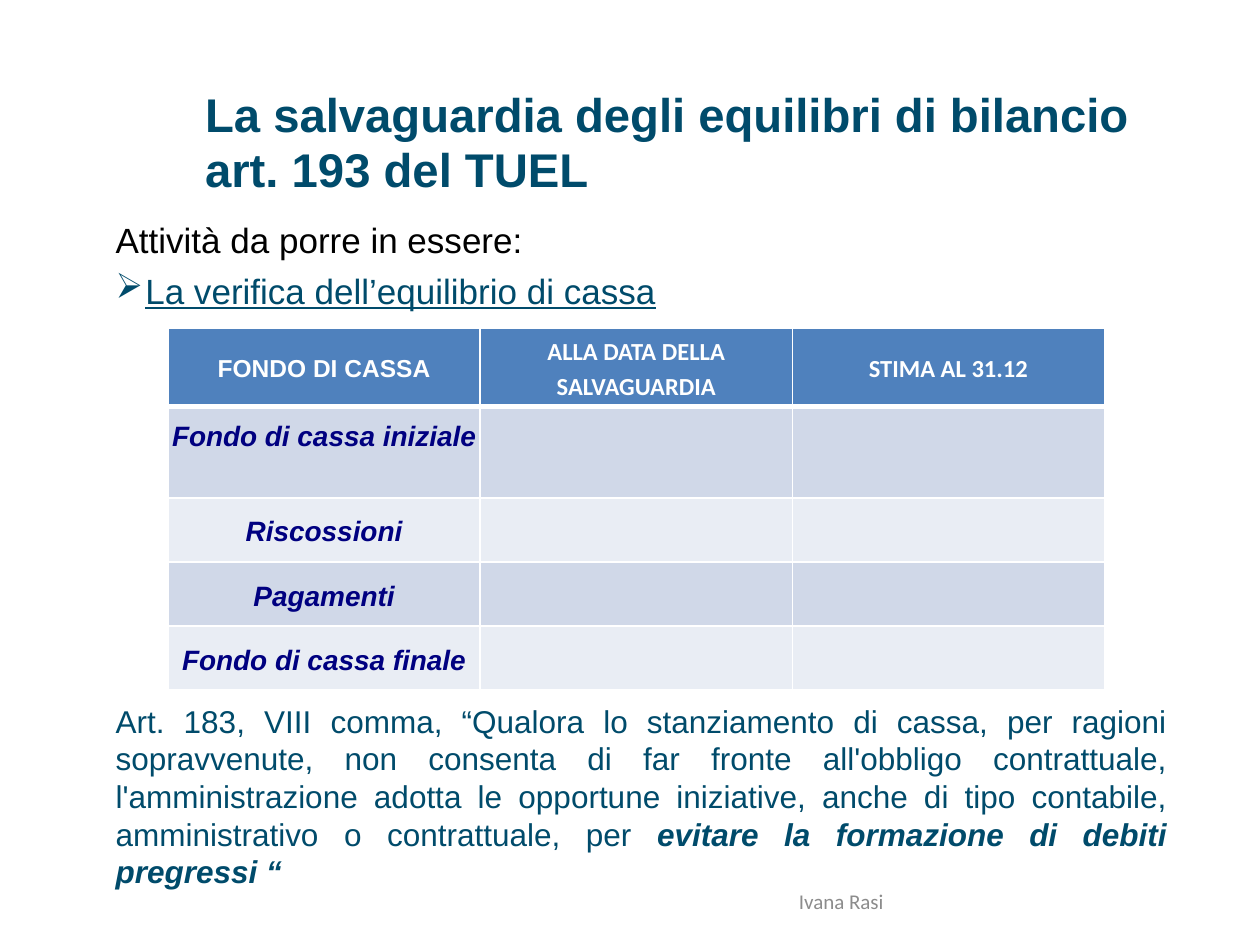
"""Build the slide on the cash balance check under art. 193 of the TUEL."""
from lxml.etree import SubElement
from pptx import Presentation
from pptx.dml.color import RGBColor
from pptx.enum.text import MSO_ANCHOR, MSO_AUTO_SIZE, PP_ALIGN
from pptx.oxml.ns import qn
from pptx.util import Pt

TEAL = RGBColor(0x00, 0x4B, 0x6B)
BLACK = RGBColor(0x00, 0x00, 0x00)
WHITE = RGBColor(0xFF, 0xFF, 0xFF)
NAVY = RGBColor(0x00, 0x00, 0x80)
GREY = RGBColor(0x8C, 0x8C, 0x8C)
HEADER_BLUE = RGBColor(0x4F, 0x81, 0xBD)
BANDS = (RGBColor(0xD0, 0xD8, 0xE8), RGBColor(0xE9, 0xED, 0xF4))

TITLE = "La salvaguardia degli equilibri di bilancio\vart. 193 del TUEL"
INTRO = "Attività da porre in essere:"
CHECK = "La verifica dell’equilibrio di cassa"
HEADERS = [
    ("FONDO DI CASSA", "Arial"),
    ("ALLA DATA DELLA SALVAGUARDIA", "Calibri"),
    ("STIMA AL 31.12", "Calibri"),
]
ROWS = ["Fondo di cassa iniziale", "Riscossioni", "Pagamenti", "Fondo di cassa finale"]
ARTICLE = (
    "Art. 183, VIII comma, “Qualora lo stanziamento di cassa, per ragioni sopravvenute, "
    "non consenta di far fronte all'obbligo contrattuale, l'amministrazione adotta le "
    "opportune iniziative, anche di tipo contabile, amministrativo o contrattuale, per "
)
EMPHASIS = "evitare la formazione di debiti pregressi “"
AUTHOR = "Ivana Rasi"

BODY_LEFT, BODY_WIDTH = 59, 615
TABLE_LEFT, TABLE_TOP, COLUMN_WIDTH = 96, 187.4, 178.4
ROW_HEIGHTS = [44.8, 52.4, 36.6, 36.6, 36.6]
BULLET_INDENT = 17


def apply(target, values):
    """Set every named attribute on the target."""
    for name, value in values.items():
        setattr(target, name, value)


def add_span(para, text, color, **values):
    """Add one formatted run to a paragraph."""
    span = para.add_run()
    span.text = text
    apply(span.font, values)
    span.font.color.rgb = color


def add_box(page, left, top, width, height, anchor=MSO_ANCHOR.TOP):
    """Add a wrapping text box and return its text frame."""
    frame = page.shapes.add_textbox(Pt(left), Pt(top), Pt(width), Pt(height)).text_frame
    apply(frame, {"word_wrap": True, "vertical_anchor": anchor})
    return frame


def add_bullet(para):
    """Give a paragraph an arrow bullet with a hanging indent."""
    properties = para._p.get_or_add_pPr()
    properties.set("marL", str(Pt(BULLET_INDENT)))
    properties.set("indent", str(-Pt(BULLET_INDENT)))
    SubElement(properties, qn("a:buChar"), char="➢")


def add_borders(cell, top, bottom):
    """Draw white lines around a table cell."""
    properties = cell._tc.get_or_add_tcPr()
    widths = {"a:lnL": 1, "a:lnR": 1, "a:lnT": top, "a:lnB": bottom}
    for position, (tag, width) in enumerate(widths.items()):
        line = properties.makeelement(qn(tag), {"w": str(Pt(width))})
        fill = SubElement(line, qn("a:solidFill"))
        SubElement(fill, qn("a:srgbClr"), val=str(WHITE))
        properties.insert(position, line)


def add_title(page):
    """Place and format the title."""
    title = page.shapes.title
    apply(title, {"left": Pt(110), "top": Pt(46.8), "width": Pt(565), "height": Pt(69)})
    frame = title.text_frame
    apply(frame, {"text": TITLE, "word_wrap": True,
                  "auto_size": MSO_AUTO_SIZE.NONE, "vertical_anchor": MSO_ANCHOR.MIDDLE})
    para = frame.paragraphs[0]
    apply(para, {"alignment": PP_ALIGN.LEFT, "line_spacing": Pt(31)})
    for span in para.runs:
        apply(span.font, {"name": "Arial", "size": Pt(27), "bold": True})
        span.font.color.rgb = TEAL


def add_intro(page):
    """Add the two lines above the table."""
    frame = add_box(page, BODY_LEFT, 121.5, BODY_WIDTH, 60)
    add_span(frame.paragraphs[0], INTRO, BLACK, name="Arial", size=Pt(20))
    para = frame.add_paragraph()
    para.space_before = Pt(5)
    add_bullet(para)
    add_span(para, CHECK, TEAL, name="Arial", size=Pt(20), underline=True)


def add_cash_table(page):
    """Add the cash fund table."""
    table = page.shapes.add_table(
        len(ROWS) + 1, len(HEADERS), Pt(TABLE_LEFT), Pt(TABLE_TOP),
        Pt(COLUMN_WIDTH * len(HEADERS)), Pt(sum(ROW_HEIGHTS))).table
    for column in table.columns:
        column.width = Pt(COLUMN_WIDTH)
    for index, (row, height) in enumerate(zip(table.rows, ROW_HEIGHTS)):
        row.height = Pt(height)
        for cell in row.cells:
            cell.fill.solid()
            cell.fill.fore_color.rgb = BANDS[(index - 1) % 2] if index else HEADER_BLUE
            add_borders(cell, 3 if index == 1 else 1, 1 if index else 3)
    for column, (text, font) in enumerate(HEADERS):
        fill_cell(table.cell(0, column), text, WHITE, 2.9, name=font, size=Pt(14), bold=True)
    for index, text in enumerate(ROWS, 1):
        fill_cell(table.cell(index, 0), text, NAVY, 5.8,
                  name="Arial", size=Pt(16), bold=True, italic=True)
    table.cell(1, 0).vertical_anchor = MSO_ANCHOR.TOP


def fill_cell(cell, text, color, inset, **values):
    """Write centred text in a table cell."""
    apply(cell, {"margin_left": Pt(2), "margin_right": Pt(2), "margin_top": Pt(inset),
                 "margin_bottom": Pt(inset), "vertical_anchor": MSO_ANCHOR.MIDDLE})
    para = cell.text_frame.paragraphs[0]
    apply(para, {"alignment": PP_ALIGN.CENTER, "line_spacing": 1.15})
    add_span(para, text, color, **values)


def add_article(page):
    """Add the quoted article below the table."""
    para = add_box(page, BODY_LEFT, 397.6, BODY_WIDTH, 116).paragraphs[0]
    apply(para, {"alignment": PP_ALIGN.JUSTIFY, "line_spacing": Pt(21.5)})
    add_span(para, ARTICLE, TEAL, name="Arial", size=Pt(18))
    add_span(para, EMPHASIS, TEAL, name="Arial", size=Pt(18), bold=True, italic=True)


def add_author(page):
    """Add the author's name at the foot."""
    para = add_box(page, 427.5, 500.4, 106.5, 28.8, MSO_ANCHOR.MIDDLE).paragraphs[0]
    para.alignment = PP_ALIGN.CENTER
    add_span(para, AUTHOR, GREY, name="Calibri", size=Pt(12))


def main():
    """Build and save the deck."""
    deck = Presentation()
    apply(deck, {"slide_width": Pt(720), "slide_height": Pt(540)})
    page = deck.slides.add_slide(deck.slide_layouts[5])
    for add_part in (add_title, add_intro, add_cash_table, add_article, add_author):
        add_part(page)
    deck.save("out.pptx")


if __name__ == "__main__":
    main()
